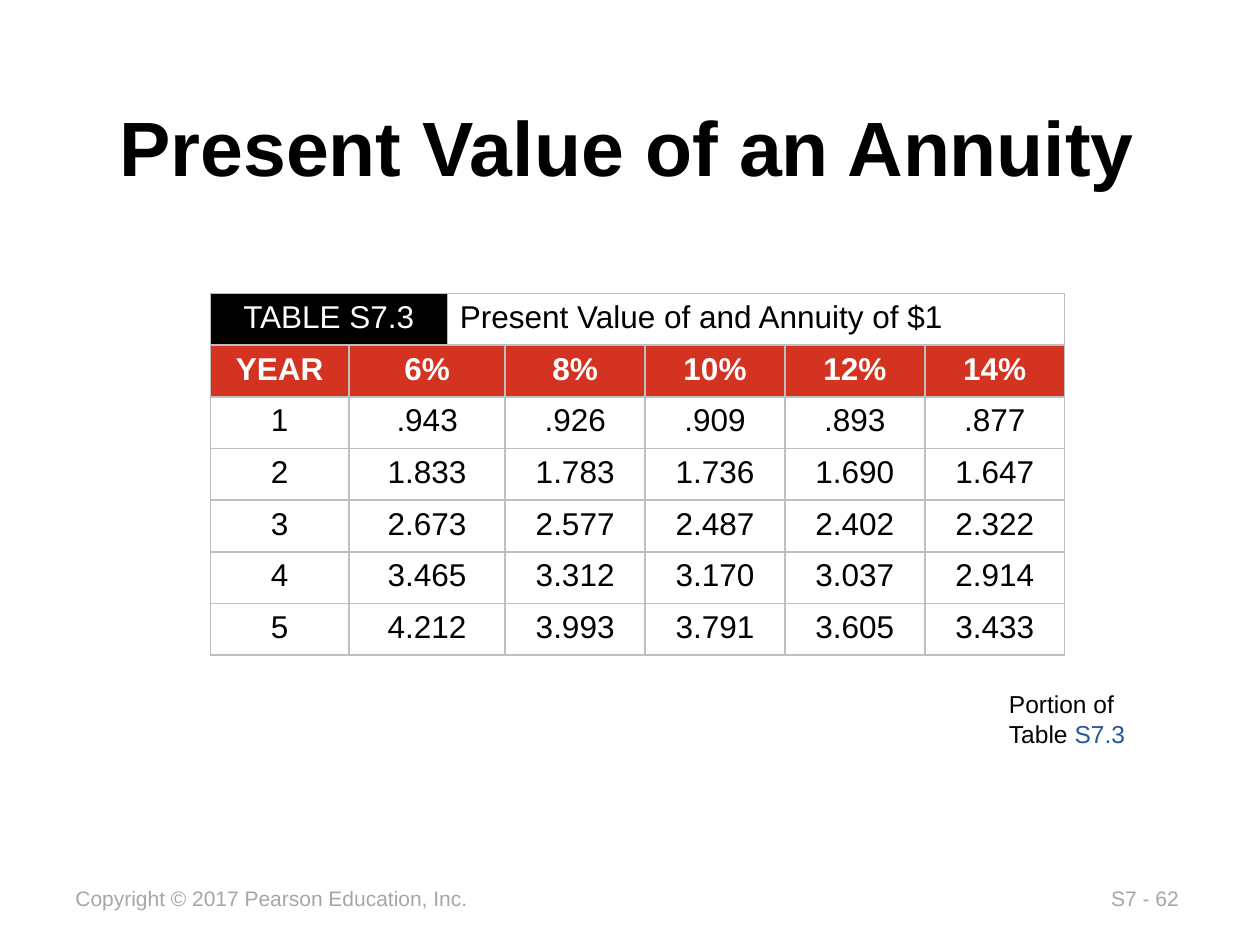
from lxml import etree
from pptx import Presentation
from pptx.dml.color import RGBColor
from pptx.enum.text import MSO_ANCHOR, MSO_AUTO_SIZE, PP_ALIGN
from pptx.oxml.ns import qn
from pptx.util import Inches, Pt

CENTER, LEFT = PP_ALIGN.CENTER, PP_ALIGN.LEFT
MIDDLE = MSO_ANCHOR.MIDDLE
NO_AUTOFIT, FIT_SHAPE = MSO_AUTO_SIZE.NONE, MSO_AUTO_SIZE.SHAPE_TO_FIT_TEXT

FONT = "Arial"
BLACK, WHITE, RED, BLUE = "000000", "FFFFFF", "D33320", "255898"
FOOTER_GRAY, BORDER_GRAY = "A6A6A6", "BFBFBF"

COLUMN_WIDTHS = [1.1, 0.78, 0.46, 1.11, 1.11, 1.11, 1.11]
ROW_HEIGHT = 0.41
HEADINGS = ["YEAR", "6%", "8%", "10%", "12%", "14%"]
ANNUITY_FACTORS = [
    ["1", ".943", ".926", ".909", ".893", ".877"],
    ["2", "1.833", "1.783", "1.736", "1.690", "1.647"],
    ["3", "2.673", "2.577", "2.487", "2.402", "2.322"],
    ["4", "3.465", "3.312", "3.170", "3.037", "2.914"],
    ["5", "4.212", "3.993", "3.791", "3.605", "3.433"],
]


def rgb(color):
    return RGBColor.from_string(color)


def style_run(span, size, color, bold=False):
    span.font.name = FONT
    span.font.size = Pt(size)
    span.font.bold = bold
    span.font.color.rgb = rgb(color)


def add_title(page, text):
    title = page.shapes.title
    title.left, title.top = Inches(0.6), Inches(0.65)
    title.width, title.height = Inches(8.76), Inches(1.01)
    frame = title.text_frame
    frame.text = text
    frame.auto_size = NO_AUTOFIT
    frame.vertical_anchor = MIDDLE
    para = frame.paragraphs[0]
    para.alignment = CENTER
    style_run(para.runs[0], 44, BLACK, bold=True)


def add_text(page, left, top, width, height, spans, size, wrap=False):
    """Add a one-paragraph text box; spans holds (text, color) pairs."""
    box = page.shapes.add_textbox(
        Inches(left), Inches(top), Inches(width), Inches(height))
    frame = box.text_frame
    frame.word_wrap = wrap
    frame.auto_size = FIT_SHAPE
    for text, color in spans:
        span = frame.paragraphs[0].add_run()
        span.text = text
        style_run(span, size, color)


def add_borders(cell):
    properties = cell._tc.get_or_add_tcPr()
    for side in ("a:lnL", "a:lnR", "a:lnT", "a:lnB"):
        line = etree.SubElement(properties, qn(side), w=str(Pt(1)))
        fill = etree.SubElement(line, qn("a:solidFill"))
        etree.SubElement(fill, qn("a:srgbClr"), val=BORDER_GRAY)


def fill_cell(cell, text, color=BLACK, fill=None, bold=False, align=CENTER):
    if fill:
        cell.fill.solid()
        cell.fill.fore_color.rgb = rgb(fill)
    else:
        cell.fill.background()
    cell.text = text
    para = cell.text_frame.paragraphs[0]
    para.alignment = align
    style_run(para.runs[0], 18, color, bold)


def add_annuity_table(page):
    row_count = len(ANNUITY_FACTORS) + 2
    table = page.shapes.add_table(
        row_count, len(COLUMN_WIDTHS), Inches(1.67), Inches(2.33),
        Inches(sum(COLUMN_WIDTHS)), Inches(ROW_HEIGHT * row_count)).table
    table.first_row = table.horz_banding = False
    for column, width in zip(table.columns, COLUMN_WIDTHS):
        column.width = Inches(width)
    for row in table.rows:
        row.height = Inches(ROW_HEIGHT)
    for cell in table.iter_cells():
        add_borders(cell)

    # The caption label ends inside the 6% column, so that column is split in two.
    table.cell(0, 0).merge(table.cell(0, 1))
    table.cell(0, 2).merge(table.cell(0, 6))
    fill_cell(table.cell(0, 0), "TABLE S7.3", WHITE, BLACK)
    fill_cell(table.cell(0, 2), "Present Value of and Annuity of $1", align=LEFT)

    for row, values in enumerate([HEADINGS] + ANNUITY_FACTORS, start=1):
        table.cell(row, 1).merge(table.cell(row, 2))
        for column, value in zip((0, 1, 3, 4, 5, 6), values):
            cell = table.cell(row, column)
            if row == 1:
                fill_cell(cell, value, WHITE, RED, bold=True)
            else:
                fill_cell(cell, value)


def main():
    deck = Presentation()
    deck.slide_width, deck.slide_height = Inches(10), Inches(7.5)
    page = deck.slides.add_slide(deck.slide_layouts[5])
    add_text(page, 8.72, 6.98, 0.76, 0.3, [("S7 - 62", FOOTER_GRAY)], 12)
    add_text(page, 0.5, 6.98, 3.35, 0.3,
             [("Copyright © 2017 Pearson Education, Inc.", FOOTER_GRAY)], 12)
    add_title(page, "Present Value of an Annuity")
    add_text(page, 7.91, 5.42, 1.36, 0.57,
             [("Portion of Table ", BLACK), ("S7.3", BLUE)], 14, wrap=True)
    add_annuity_table(page)
    deck.save("out.pptx")


if __name__ == "__main__":
    main()
